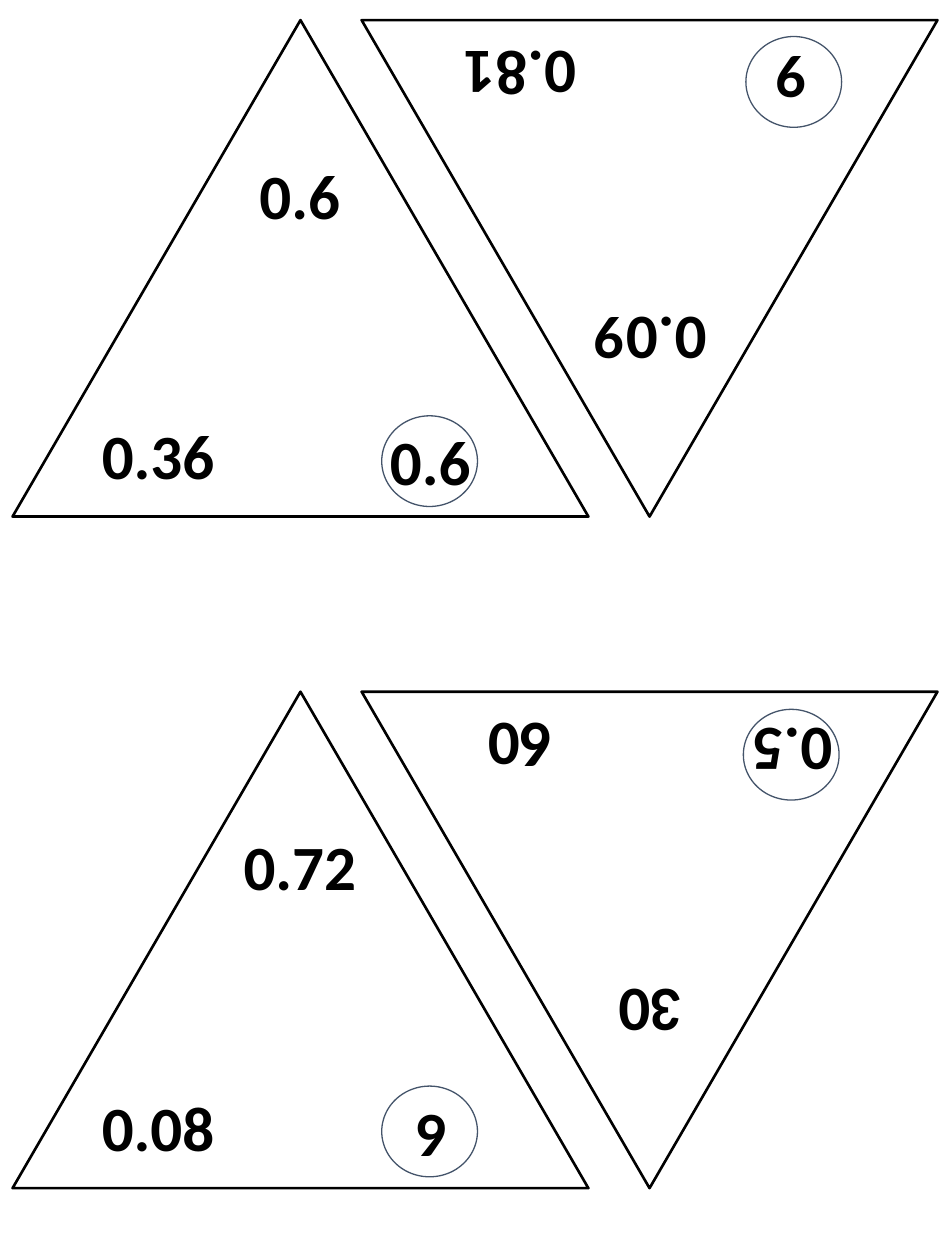
from pptx import Presentation
from pptx.dml.color import RGBColor
from pptx.enum import shapes, text
from pptx.util import Pt

PX = 9144
COLORS = {"ink": "000000", "paper": "FFFFFF", "ring": "44546A"}
TRIANGLE_WIDTH, TRIANGLE_HEIGHT = 457, 394
CORNERS = [(165, 103, 126), (49, 310, 133), (257, 314, 149)]
LABEL_HEIGHT = 71
CARDS = [
    (10, 16, 0, ["0.6", "0.36", "0.6"]),
    (10, 549, 0, ["0.72", "0.08", "9"]),
    (287, 549, 180, ["30", "0.5", "60"]),
    (287, 16, 180, ["0.09", "9", "0.81"]),
]
RINGS = [(303, 330), (590, 563), (303, 862), (592, 29)]


def add_label(group, words, *, box, rotation=0, size=36, font="Calibri", color="ink"):
    shape = group.shapes.add_textbox(*(value * PX for value in box))
    shape.rotation = rotation
    frame = shape.text_frame
    frame.word_wrap = True
    frame.auto_size = text.MSO_AUTO_SIZE.SHAPE_TO_FIT_TEXT
    paragraph = frame.paragraphs[0]
    paragraph.alignment = text.PP_ALIGN.CENTER
    run = paragraph.add_run()
    run.text = words
    run.font.name = font
    run.font.size = Pt(size)
    run.font.bold = True
    run.font.color.rgb = RGBColor.from_string(COLORS[color])


presentation = Presentation()
presentation.slide_width = 750 * PX
presentation.slide_height = 1000 * PX
slide = presentation.slides.add_slide(presentation.slide_layouts[6])

for left, top, rotation, numbers in CARDS:
    group = slide.shapes.add_group_shape()
    triangle = group.shapes.add_shape(
        shapes.MSO_SHAPE.ISOSCELES_TRIANGLE,
        left * PX, top * PX, TRIANGLE_WIDTH * PX, TRIANGLE_HEIGHT * PX,
    )
    triangle.rotation = rotation
    triangle.shadow.inherit = False
    triangle.fill.solid()
    triangle.fill.fore_color.rgb = RGBColor.from_string(COLORS["paper"])
    triangle.line.color.rgb = RGBColor.from_string(COLORS["ink"])
    triangle.line.width = Pt(1.5)
    for number, (x, y, width) in zip(numbers, CORNERS):
        if rotation:
            x = TRIANGLE_WIDTH - x - width
            y = TRIANGLE_HEIGHT - y - LABEL_HEIGHT
        add_label(group, number, box=(left + x, top + y, width, LABEL_HEIGHT), rotation=rotation)

for left, top in RINGS:
    ring = slide.shapes.add_shape(shapes.MSO_SHAPE.OVAL, left * PX, top * PX, 76 * PX, 72 * PX)
    ring.shadow.inherit = False
    ring.fill.background()
    ring.line.color.rgb = RGBColor.from_string(COLORS["ring"])
    ring.line.width = Pt(0.75)

presentation.save("out.pptx")
